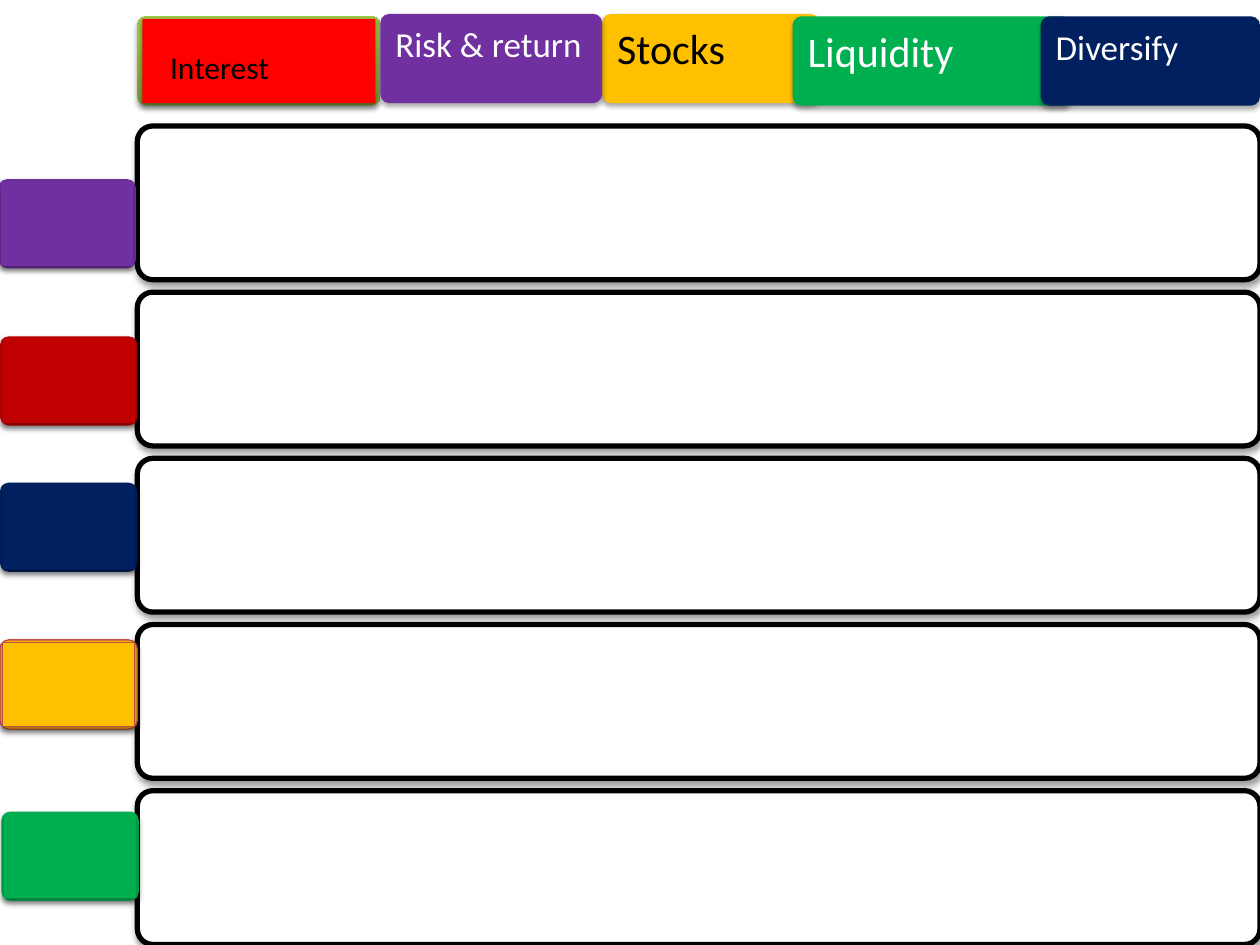
from lxml import etree
from pptx import Presentation
from pptx.dml.color import RGBColor
from pptx.enum.shapes import MSO_SHAPE as Shape
from pptx.enum.text import MSO_ANCHOR as Anchor, MSO_AUTO_SIZE as AutoSize, PP_ALIGN as Align
from pptx.oxml.ns import qn
from pptx.util import Cm, Pt

BLACK = RGBColor(0x00, 0x00, 0x00)
WHITE = RGBColor(0xFF, 0xFF, 0xFF)
RED = RGBColor(0xFF, 0x00, 0x00)
DARK_RED = RGBColor(0xC0, 0x00, 0x00)
PURPLE = RGBColor(0x70, 0x30, 0xA0)
NAVY = RGBColor(0x00, 0x20, 0x60)
GOLD = RGBColor(0xFF, 0xC0, 0x00)
GREEN = RGBColor(0x00, 0xB0, 0x50)
BRICK = RGBColor(0xBF, 0x4C, 0x48)
OLIVE = RGBColor(0x77, 0x97, 0x37)
LIME = RGBColor(0x9D, 0xC7, 0x46)

ROW_LEFT, ROW_TOP, ROW_WIDTH, ROW_HEIGHT, ROW_PITCH = 2.77, 2.54, 22.63, 3.1, 3.35
TAB_HEIGHT = 1.8
SIDE_WIDTH = 2.77
INSET = 0.05

SIDE_TABS = [
    (0, 6.78, DARK_RED, None),
    (-0.03, 3.61, PURPLE, None),
    (0, 12.9, GOLD, BRICK),
    (0, 9.73, NAVY, None),
    (0.03, 16.36, GREEN, None),
]
STOCKS_TAB = ("Stocks", 12.14, 0.28, 4.37, GOLD, BLACK, 24)
FRONT_TABS = [
    ("Liquidity", 15.98, 0.33, 5.61, GREEN, WHITE, 24),
    ("Risk & return", 7.67, 0.28, 4.47, PURPLE, WHITE, 20),
    ("Diversify", 20.98, 0.33, 4.42, NAVY, WHITE, 20),
]


def add_shadow(shape, opacity, distance):
    effects = etree.SubElement(shape._element.spPr, qn("a:effectLst"))
    shadow = etree.SubElement(
        effects, qn("a:outerShdw"), blurRad=str(Pt(3.1)), dist=str(Pt(distance)),
        dir="5400000", rotWithShape="0")
    color = etree.SubElement(shadow, qn("a:srgbClr"), val=str(BLACK))
    etree.SubElement(color, qn("a:alpha"), val=str(opacity * 1000))


def add_box(shapes, kind, left, top, width, height, fill,
            line=None, line_width=0.75, opacity=35, distance=1.8):
    box = shapes.add_shape(kind, Cm(left), Cm(top), Cm(width), Cm(height))
    if kind == Shape.ROUNDED_RECTANGLE:
        box.adjustments[0] = 0.1
    box.fill.solid()
    box.fill.fore_color.rgb = fill
    if line is None:
        box.line.fill.background()
    else:
        box.line.color.rgb = line
        box.line.width = Pt(line_width)
    add_shadow(box, opacity, distance)
    return box


def write_label(frame, text, size, color):
    frame.text = text
    paragraph = frame.paragraphs[0]
    paragraph.alignment = Align.LEFT
    font = paragraph.runs[0].font
    font.name = "Calibri"
    font.size = Pt(size)
    font.color.rgb = color


def add_rows(slide):
    rows = slide.shapes.add_group_shape()
    for index in range(5):
        add_box(rows.shapes, Shape.ROUNDED_RECTANGLE, ROW_LEFT,
                ROW_TOP + index * ROW_PITCH, ROW_WIDTH, ROW_HEIGHT, WHITE,
                line=BLACK, line_width=3, opacity=38, distance=1.6)


def add_layered_tab(slide, left, top, width, outer_fill, inner_fill,
                    line=None, side_inset=INSET):
    tab = slide.shapes.add_group_shape()
    outer = add_box(tab.shapes, Shape.ROUNDED_RECTANGLE, left, top, width,
                    TAB_HEIGHT, outer_fill, line)
    add_box(tab.shapes, Shape.RECTANGLE, left + side_inset, top + INSET,
            width - 2 * side_inset, TAB_HEIGHT - 2 * INSET, inner_fill, line)
    return outer


def add_interest_tab(slide):
    rim = add_layered_tab(slide, 2.77, 0.33, 4.9, OLIVE, RED, side_inset=0.1)
    rim.fill.gradient()
    rim.fill.gradient_angle = 90
    for stop, color, position in zip(rim.fill.gradient_stops, (OLIVE, LIME), (0, 0.8)):
        stop.color.rgb = color
        stop.position = position


def add_named_tab(slide, text, left, top, width, fill, color, size):
    tab = add_box(slide.shapes, Shape.ROUNDED_RECTANGLE, left, top, width, TAB_HEIGHT, fill)
    tab.text_frame.vertical_anchor = Anchor.TOP
    write_label(tab.text_frame, text, size, color)


def add_interest_label(slide):
    label = slide.shapes.add_textbox(Cm(3.18), Cm(0.84), Cm(2.51), Cm(1.02))
    label.text_frame.word_wrap = False
    label.text_frame.auto_size = AutoSize.SHAPE_TO_FIT_TEXT
    write_label(label.text_frame, "Interest", 18, BLACK)


def main():
    deck = Presentation()
    deck.slide_width, deck.slide_height = Cm(25.4), Cm(19.05)
    slide = deck.slides.add_slide(deck.slide_layouts[6])
    add_rows(slide)
    add_interest_tab(slide)
    add_named_tab(slide, *STOCKS_TAB)
    for left, top, fill, line in SIDE_TABS:
        add_layered_tab(slide, left, top, SIDE_WIDTH, fill, fill, line)
    for tab in FRONT_TABS:
        add_named_tab(slide, *tab)
    add_interest_label(slide)
    deck.save("out.pptx")


if __name__ == "__main__":
    main()
